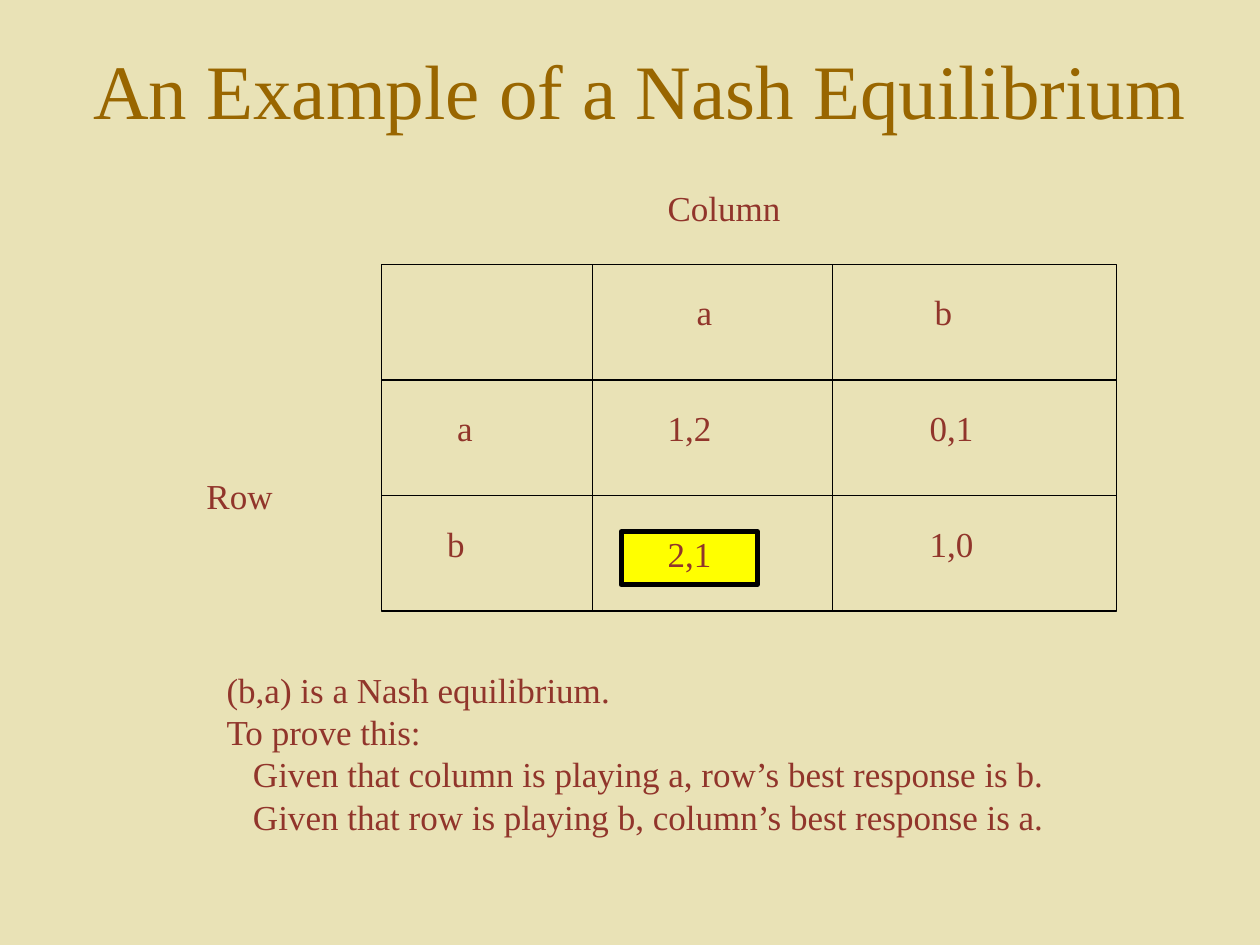
from typing import NamedTuple

import pptx
import pptx.dml.color
import pptx.enum.shapes
import pptx.enum.text
import pptx.oxml.ns
import pptx.util
from lxml import etree
from pptx.util import Inches

FONT = "Times New Roman"
PAPER, INK, TITLE, BLACK, YELLOW = "E9E2B6", "91352B", "996600", "000000", "FFFF00"


class Area(NamedTuple):
    left: float
    top: float
    width: float
    height: float


class Label(NamedTuple):
    text: str
    area: Area


LABEL_HEIGHT = 0.44
PAYOFF_WIDTH = 0.55
COLUMN_A, COLUMN_B = 5.2, 7.28
HEADER_TOP, ROW_A_TOP, ROW_B_TOP = 2.26, 3.18, 4.1

MATRIX = Area(3.03, 2.1, 5.83, 2.75)
ROW_COUNT = 3
COLUMN_EDGES = (4.7, 6.61)
HIGHLIGHT = Area(4.93, 4.22, 1.08, 0.42)

LABELS = [
    Label("Column", Area(COLUMN_A, 1.43, 1.1, LABEL_HEIGHT)),
    Label("Row", Area(1.54, 3.72, 0.73, LABEL_HEIGHT)),
    Label("a", Area(5.43, HEADER_TOP, 0.32, LABEL_HEIGHT)),
    Label("b", Area(7.32, HEADER_TOP, 0.34, LABEL_HEIGHT)),
    Label("a", Area(3.53, ROW_A_TOP, 0.32, LABEL_HEIGHT)),
    Label("b", Area(3.45, ROW_B_TOP, 0.34, LABEL_HEIGHT)),
    Label("1,2", Area(COLUMN_A, ROW_A_TOP, PAYOFF_WIDTH, LABEL_HEIGHT)),
    Label("0,1", Area(COLUMN_B, ROW_A_TOP, PAYOFF_WIDTH, LABEL_HEIGHT)),
    Label("2,1", Area(COLUMN_A, 4.18, PAYOFF_WIDTH, LABEL_HEIGHT)),
    Label("1,0", Area(COLUMN_B, ROW_B_TOP, PAYOFF_WIDTH, LABEL_HEIGHT)),
]

PROOF_INDENT = 0.21
PROOF = [
    ("(b,a) is a Nash equilibrium.", 0),
    ("To prove this:", 0),
    ("Given that column is playing a, row’s best response is b.", PROOF_INDENT),
    ("Given that row is playing b, column’s best response is a.", PROOF_INDENT),
]


def color(value: str) -> pptx.dml.color.RGBColor:
    return pptx.dml.color.RGBColor.from_string(value)


def lengths(area: Area) -> list[int]:
    return [Inches(value) for value in area]


def apply(target, values: dict) -> None:
    """Set each named attribute of the target."""
    for name, value in values.items():
        setattr(target, name, value)


def add_rectangle(page, area: Area, weight: float, fill: str | None = None) -> None:
    shape = page.shapes.add_shape(
        pptx.enum.shapes.MSO_SHAPE.RECTANGLE, *lengths(area))
    shape.shadow.inherit = False
    if fill:
        shape.fill.solid()
        shape.fill.fore_color.rgb = color(fill)
    else:
        shape.fill.background()
    shape.line.color.rgb = color(BLACK)
    shape.line.width = pptx.util.Pt(weight)


def add_rule(page, left: float, top: float, right: float, bottom: float) -> None:
    ends = [Inches(value) for value in (left, top, right, bottom)]
    rule = page.shapes.add_connector(
        pptx.enum.shapes.MSO_CONNECTOR.STRAIGHT, *ends)
    rule.line.color.rgb = color(BLACK)
    rule.line.width = pptx.util.Pt(0.75)
    etree.SubElement(rule._element.spPr, pptx.oxml.ns.qn("a:effectLst"))


def add_text(page, area: Area, lines: list[tuple[str, float]], size: int = 20,
             ink: str = INK, frame_format: dict | None = None,
             para_format: dict | None = None) -> None:
    """Add a text box with one paragraph for each (text, left indent) pair."""
    frame = page.shapes.add_textbox(*lengths(area)).text_frame
    apply(frame, frame_format or {})
    for index, (text, indent) in enumerate(lines):
        para = frame.add_paragraph() if index else frame.paragraphs[0]
        if indent:
            para._p.get_or_add_pPr().set("marL", str(Inches(indent)))
        apply(para, para_format or {})
        span = para.add_run()
        span.text = text
        apply(span.font, {"name": FONT, "size": pptx.util.Pt(size)})
        span.font.color.rgb = color(ink)


def add_matrix(page) -> None:
    add_rectangle(page, MATRIX, 0.75)
    right, bottom = MATRIX.left + MATRIX.width, MATRIX.top + MATRIX.height
    for row in range(1, ROW_COUNT):
        y = MATRIX.top + row * MATRIX.height / ROW_COUNT
        add_rule(page, MATRIX.left, y, right, y)
    for x in COLUMN_EDGES:
        add_rule(page, x, MATRIX.top, x, bottom)


def main() -> None:
    deck = pptx.Presentation()
    apply(deck, {"slide_width": Inches(10), "slide_height": Inches(7.5)})
    page = deck.slides.add_slide(deck.slide_layouts[6])
    page.background.fill.solid()
    page.background.fill.fore_color.rgb = color(PAPER)

    add_rectangle(page, HIGHLIGHT, 3, YELLOW)
    add_text(page, Area(0.58, 0.08, 9, 1.25),
             [("An Example of a Nash Equilibrium", 0)], 44, TITLE,
             {"word_wrap": True,
              "vertical_anchor": pptx.enum.text.MSO_ANCHOR.MIDDLE},
             {"alignment": pptx.enum.text.PP_ALIGN.CENTER})
    add_matrix(page)

    grow = pptx.enum.text.MSO_AUTO_SIZE.SHAPE_TO_FIT_TEXT
    for label in LABELS:
        add_text(page, label.area, [(label.text, 0)],
                 frame_format={"word_wrap": False, "auto_size": grow})
    add_text(page, Area(1.7, 5.26, 7.24, 1.45), PROOF,
             frame_format={"word_wrap": True, "auto_size": grow})
    deck.save("out.pptx")


if __name__ == "__main__":
    main()
